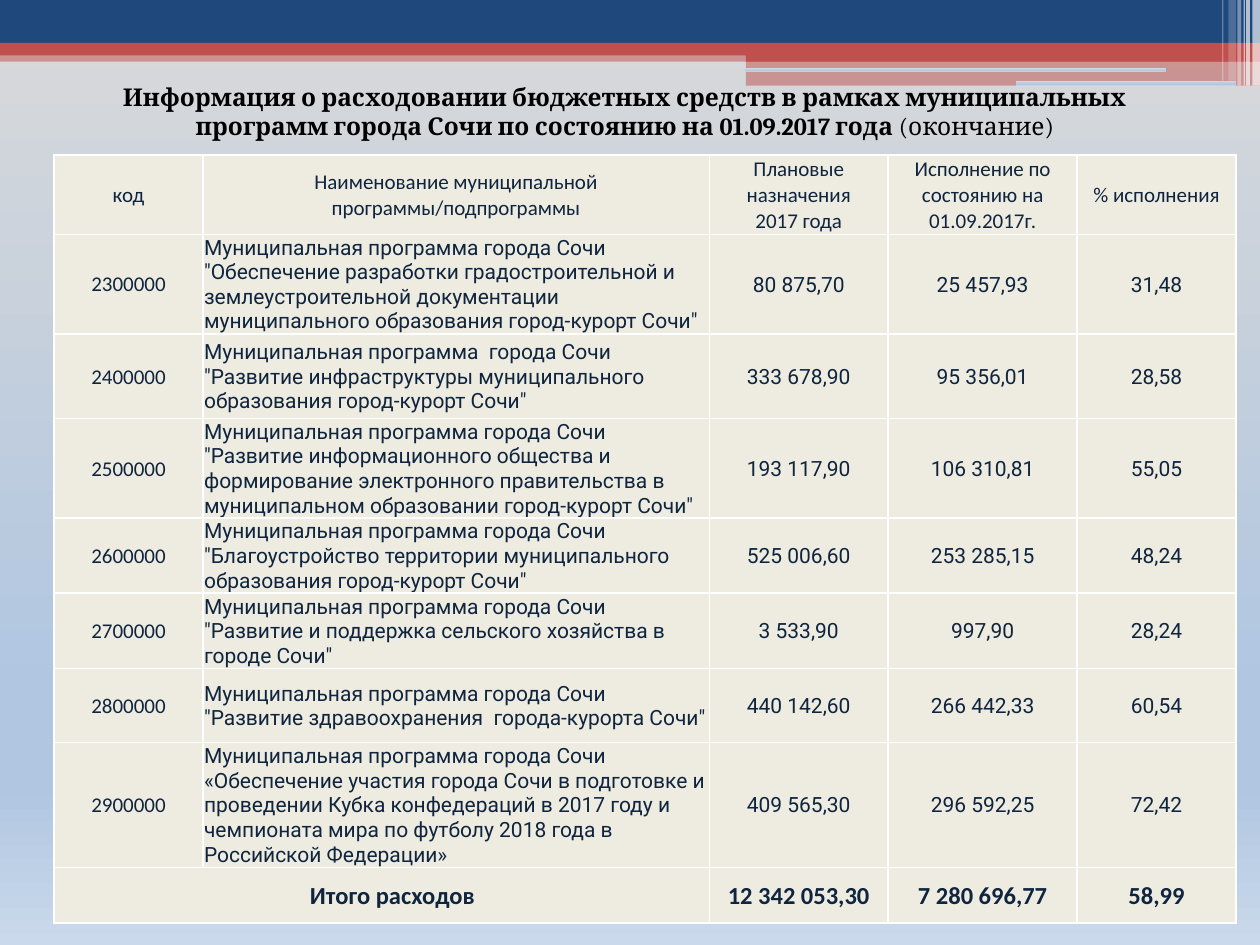
"""Build the slide on spending under the municipal programmes of Sochi."""
from typing import NamedTuple, Optional

from lxml import etree
from pptx import Presentation
from pptx.dml.color import RGBColor
from pptx.enum import shapes, text
from pptx.oxml.ns import qn
from pptx.util import Inches, Pt

NAVY = RGBColor(0x1F, 0x49, 0x7D)
RED = RGBColor(0xC0, 0x50, 0x4D)
WHITE = RGBColor(0xFF, 0xFF, 0xFF)
BLACK = RGBColor(0x00, 0x00, 0x00)
INK = RGBColor(0x0F, 0x24, 0x3E)
CREAM = RGBColor(0xEE, 0xEC, 0xE1)
GREY = RGBColor(0xD9, 0xD9, 0xD9)
SKY = RGBColor(0xB0, 0xC6, 0xE1)
PALE = RGBColor(0xCA, 0xD9, 0xEB)
BACKDROP = ((0, GREY), (74, SKY), (83, SKY), (100, PALE))


class Bar(NamedTuple):
    left: float
    top: float
    width: float
    height: float
    color: Optional[RGBColor]
    opacity: int = 100


class Style(NamedTuple):
    font: str
    size: int = 12
    bold: bool = False
    color: RGBColor = INK


class Programme(NamedTuple):
    code: str
    name: str
    plan: str
    actual: str
    percent: str
    height: float


LABEL = Style("Calibri")
FIGURE = Style("Roboto")
TOTAL = Style("Calibri", 14, True)
TITLE = Style("Cambria", 14, True, BLACK)
TITLE_NOTE = TITLE._replace(bold=False)

BARS = (
    Bar(0, 0.4, 10, 0.09, RED, 50),
    Bar(0, 0, 10, 0.34, NAVY),
    Bar(0, 0.34, 10, 0.1, RED),
    Bar(5.92, 0.39, 4.08, 0.1, RED),
    Bar(5.92, 0.48, 4.08, 0.2, RED, 50),
    Bar(5.91, 0.54, 3.35, 0.03, None),
    Bar(8.06, 0.64, 1.75, 0.04, None),
    Bar(9.94, 0, 0.06, 0.68, WHITE, 65),
    Bar(9.89, 0, 0.03, 0.68, WHITE, 65),
    Bar(9.87, 0, 0.01, 0.68, WHITE, 60),
    Bar(9.82, 0, 0.03, 0.68, WHITE, 40),
    Bar(9.75, 0, 0.06, 0.64, WHITE, 20),
    Bar(9.7, 0, 0.01, 0.64, WHITE, 30),
)

COLUMN_WIDTHS = (1.18, 4.02, 1.42, 1.5, 1.26)
HEADER_HEIGHT = 0.63
TOTAL_HEIGHT = 0.44
HEADERS = (
    "код",
    "Наименование муниципальной программы/подпрограммы",
    "Плановые\nназначения\n2017 года",
    "Исполнение по состоянию на 01.09.2017г.",
    "% исполнения",
)
PROGRAMMES = (
    Programme("2300000", 'Муниципальная программа города Сочи "Обеспечение разработки градостроительной и '
              'землеустроительной документации муниципального образования город-курорт Сочи"',
              "80 875,70", "25 457,93", "31,48", 0.78),
    Programme("2400000", 'Муниципальная программа  города Сочи "Развитие инфраструктуры муниципального '
              'образования город-курорт Сочи"',
              "333 678,90", "95 356,01", "28,58", 0.67),
    Programme("2500000", 'Муниципальная программа города Сочи "Развитие информационного общества и '
              'формирование электронного правительства в муниципальном образовании город-курорт Сочи"',
              "193 117,90", "106 310,81", "55,05", 0.78),
    Programme("2600000", 'Муниципальная программа города Сочи "Благоустройство территории муниципального '
              'образования город-курорт Сочи"',
              "525 006,60", "253 285,15", "48,24", 0.59),
    Programme("2700000", 'Муниципальная программа города Сочи "Развитие и поддержка сельского хозяйства в '
              'городе Сочи"',
              "3 533,90", "997,90", "28,24", 0.59),
    Programme("2800000", 'Муниципальная программа города Сочи "Развитие здравоохранения  города-курорта Сочи"',
              "440 142,60", "266 442,33", "60,54", 0.59),
    Programme("2900000", "Муниципальная программа города Сочи «Обеспечение участия города Сочи в подготовке и "
              "проведении Кубка конфедераций в 2017 году и чемпионата мира по футболу 2018 года в "
              "Российской Федерации»",
              "409 565,30", "296 592,25", "72,42", 0.99),
)
TOTALS = ("12 342 053,30", "7 280 696,77", "58,99")


def paint_backdrop(fill, element) -> None:
    """Give a fill the vertical backdrop gradient."""
    fill.gradient()
    fill.gradient_angle = 270
    stops = element.find(".//" + qn("a:gsLst"))
    for stop in list(stops):
        stops.remove(stop)
    for position, color in BACKDROP:
        stop = etree.SubElement(stops, qn("a:gs"), pos=str(position * 1000))
        etree.SubElement(stop, qn("a:srgbClr"), val=str(color))


def draw_bar(page, bar: Bar) -> None:
    """Draw one header bar; a bar without a colour shows the backdrop."""
    kind = shapes.MSO_SHAPE.RECTANGLE if bar.color else shapes.MSO_SHAPE.ROUNDED_RECTANGLE
    shape = page.shapes.add_shape(kind, Inches(bar.left), Inches(bar.top), Inches(bar.width), Inches(bar.height))
    shape.shadow.inherit = False
    shape.line.fill.background()
    if bar.color is None:
        paint_backdrop(shape.fill, shape.element)
        return
    shape.fill.solid()
    shape.fill.fore_color.rgb = bar.color
    if bar.opacity < 100:
        color = shape.element.spPr.find(".//" + qn("a:srgbClr"))
        etree.SubElement(color, qn("a:alpha"), val=str(bar.opacity * 1000))


def add_span(para, words: str, style: Style) -> None:
    """Add one styled run to a paragraph."""
    span = para.add_run()
    span.text = words
    span.font.name = style.font
    span.font.size = Pt(style.size)
    span.font.bold = style.bold
    span.font.color.rgb = style.color


def fill_cell(cell, words: str, style: Style, align=text.PP_ALIGN.CENTER) -> None:
    """Write text into a table cell, breaking lines where asked."""
    cell.fill.solid()
    cell.fill.fore_color.rgb = CREAM
    cell.vertical_anchor = text.MSO_ANCHOR.MIDDLE
    cell.margin_left = cell.margin_right = cell.margin_top = Inches(0.01)
    cell.margin_bottom = Inches(0)
    para = cell.text_frame.paragraphs[0]
    para.alignment = align
    for index, line in enumerate(words.split("\n")):
        if index:
            para.add_line_break()
        add_span(para, line, style)


def draw_table(page) -> None:
    """Draw the table of programmes with its header and total rows."""
    heights = (HEADER_HEIGHT, *(item.height for item in PROGRAMMES), TOTAL_HEIGHT)
    table = page.shapes.add_table(
        len(heights), len(COLUMN_WIDTHS), Inches(0.43), Inches(1.23),
        Inches(sum(COLUMN_WIDTHS)), Inches(sum(heights))).table
    table.horz_banding = False
    for column, width in zip(table.columns, COLUMN_WIDTHS):
        column.width = Inches(width)
    for row, height in zip(table.rows, heights):
        row.height = Inches(height)
    for column, words in enumerate(HEADERS):
        fill_cell(table.cell(0, column), words, LABEL)
    for row, item in enumerate(PROGRAMMES, 1):
        fill_cell(table.cell(row, 0), item.code, LABEL)
        fill_cell(table.cell(row, 1), item.name, FIGURE, text.PP_ALIGN.LEFT)
        for column, words in enumerate((item.plan, item.actual, item.percent), 2):
            fill_cell(table.cell(row, column), words, FIGURE)
    last = len(heights) - 1
    total = table.cell(last, 0)
    total.merge(table.cell(last, 1))
    fill_cell(total, "Итого расходов", TOTAL)
    total.margin_left = Inches(0.18)
    for column, words in enumerate(TOTALS, 2):
        fill_cell(table.cell(last, column), words, TOTAL)


def draw_title(page) -> None:
    """Draw the centred two-line title."""
    box = page.shapes.add_textbox(Inches(0.51), Inches(0.6), Inches(8.9), Inches(0.57))
    box.text_frame.word_wrap = True
    para = box.text_frame.paragraphs[0]
    para.alignment = text.PP_ALIGN.CENTER
    add_span(para, "Информация о расходовании бюджетных средств в рамках муниципальных программ "
             "города Сочи по состоянию на 01.09.2017 года ", TITLE)
    add_span(para, "(окончание)", TITLE_NOTE)


def main() -> None:
    """Build and save the deck."""
    deck = Presentation()
    deck.slide_width, deck.slide_height = Inches(10), Inches(7.5)
    page = deck.slides.add_slide(deck.slide_layouts[6])
    paint_backdrop(page.background.fill, page.element)
    for bar in BARS:
        draw_bar(page, bar)
    draw_table(page)
    draw_title(page)
    deck.save("out.pptx")


if __name__ == "__main__":
    main()
